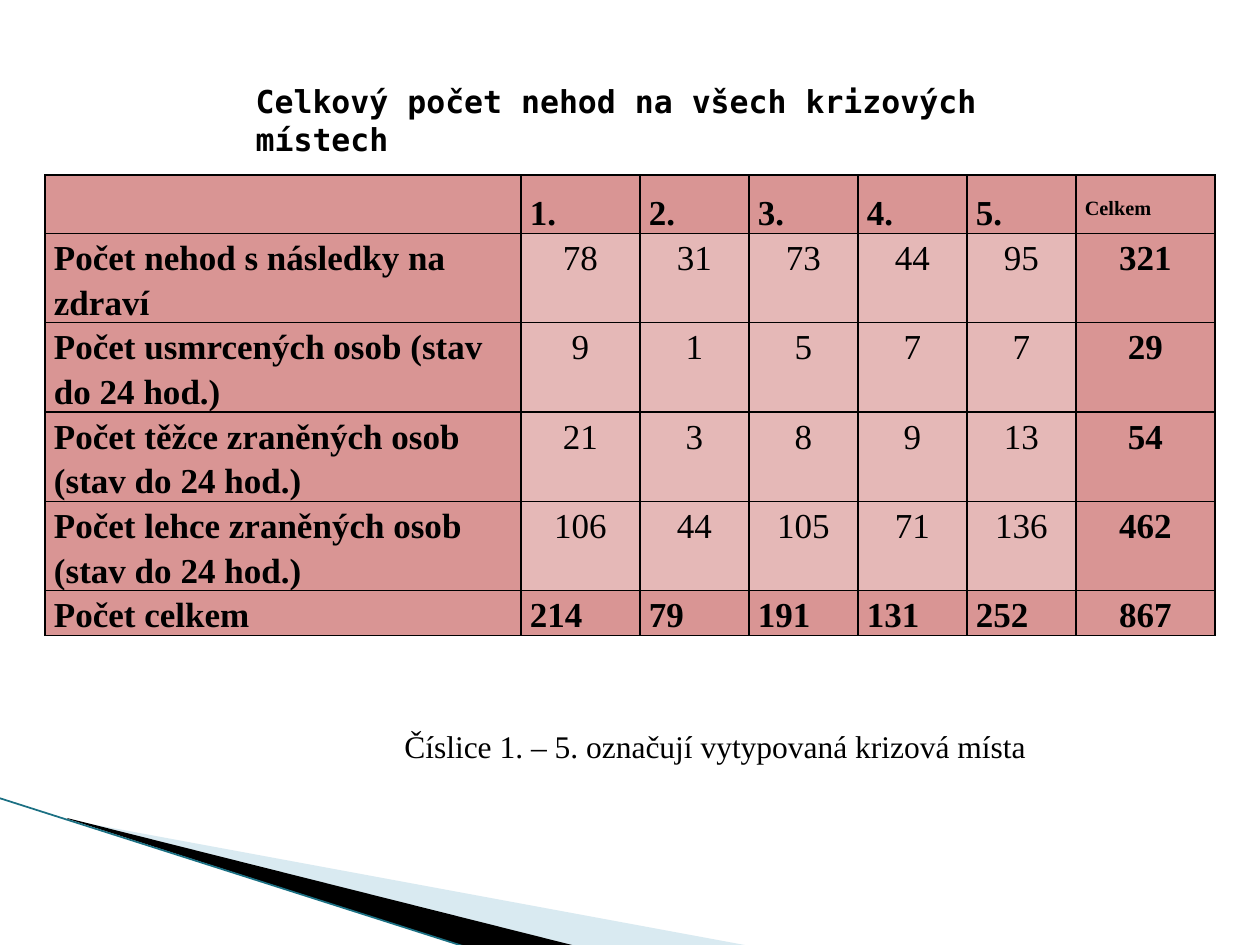
from dataclasses import dataclass

from lxml import etree
from pptx import Presentation
from pptx.dml.color import RGBColor
from pptx.enum.shapes import MSO_CONNECTOR
from pptx.enum.text import MSO_ANCHOR, MSO_AUTO_SIZE, PP_ALIGN
from pptx.oxml import parse_xml
from pptx.oxml.ns import nsdecls, qn
from pptx.util import Pt

PX = 914400 / 126
LEFT, CENTER, JUSTIFY = PP_ALIGN.LEFT, PP_ALIGN.CENTER, PP_ALIGN.JUSTIFY
TOP = MSO_ANCHOR.TOP
NO_AUTO_SIZE = MSO_AUTO_SIZE.NONE
STRAIGHT = MSO_CONNECTOR.STRAIGHT
SERIF, MONO = "Times New Roman", "DejaVu Sans Mono"
COLORS = {
    "ink": "000000",
    "heading": "D99594",
    "value": "E5B8B7",
    "pale": "A0CBDC",
    "edge": "1B7083",
}


@dataclass
class Wedge:
    points: list[tuple[int, int]]
    color: str
    opacity: int


@dataclass
class CellStyle:
    fill: str
    align: PP_ALIGN
    spacing: float
    bold: bool
    baseline: int = 0


WEDGES = [
    Wedge([(69, 820), (750, 946), (575, 946), (69, 819)], "pale", 40),
    Wedge([(67, 818), (576, 946), (469, 948), (68, 819)], "ink", 100),
]
COLUMN_WIDTHS = [476, 119, 109, 109, 109, 109, 139]
ROW_HEIGHTS = [58, 89, 89, 89, 89, 45]
ROWS = [
    ["", "1.", "2.", "3.", "4.", "5.", "Celkem"],
    ["Počet nehod s následky na zdraví", "78", "31", "73", "44", "95", "321"],
    ["Počet usmrcených osob (stav do 24 hod.)", "9", "1", "5", "7", "7", "29"],
    ["Počet těžce zraněných osob (stav do 24 hod.)", "21", "3", "8", "9", "13", "54"],
    ["Počet lehce zraněných osob (stav do 24 hod.)", "106", "44", "105", "71", "136", "462"],
    ["Počet celkem", "214", "79", "191", "131", "252", "867"],
]
HEADER = CellStyle("heading", JUSTIFY, 1.5, True)
HEADER_TOTAL = CellStyle("heading", JUSTIFY, 1.5, True, 30000)
LABEL = CellStyle("heading", LEFT, 1.15, True)
VALUE = CellStyle("value", CENTER, 1.15, False)
ROW_TOTAL = CellStyle("heading", CENTER, 1.15, True)


def emu(px: int) -> int:
    return round(px * PX)


def rgb(name: str) -> RGBColor:
    return RGBColor.from_string(COLORS[name])


def add_span(para, text: str, size: int, font: str, bold: bool = False):
    span = para.add_run()
    span.text = text
    span.font.size = Pt(size)
    span.font.name = font
    span.font.bold = bold
    span.font.color.rgb = rgb("ink")
    return span


def draw_wedge(page, wedge: Wedge) -> None:
    builder = page.shapes.build_freeform(*wedge.points[0], scale=PX)
    builder.add_line_segments(wedge.points[1:], close=True)
    shape = builder.convert_to_shape()
    shape.shadow.inherit = False
    shape.line.fill.background()
    shape.fill.solid()
    shape.fill.fore_color.rgb = rgb(wedge.color)
    if wedge.opacity < 100:
        color = shape.fill._xPr.find(f"{qn('a:solidFill')}/{qn('a:srgbClr')}")
        etree.SubElement(color, qn("a:alpha"), val=str(wedge.opacity * 1000))


def draw_edge(page) -> None:
    edge = page.shapes.add_connector(STRAIGHT, emu(-1), emu(798), emu(469), emu(948))
    edge.line.color.rgb = rgb("edge")
    edge.line.width = Pt(1)
    etree.SubElement(edge._element.spPr, qn("a:effectLst"))


def style_for(row: int, column: int) -> CellStyle:
    last_column = len(COLUMN_WIDTHS) - 1
    if row == 0:
        return HEADER_TOTAL if column == last_column else HEADER
    if column == last_column:
        return ROW_TOTAL
    if column == 0 or row == len(ROWS) - 1:
        return LABEL
    return VALUE


def add_borders(cell) -> None:
    properties = cell._tc.get_or_add_tcPr()
    for side in ("lnL", "lnR", "lnT", "lnB"):
        properties.append(parse_xml(
            f'<a:{side} {nsdecls("a")} w="12700"><a:solidFill>'
            f'<a:srgbClr val="{COLORS["ink"]}"/></a:solidFill></a:{side}>'
        ))


def fill_cell(cell, text: str, style: CellStyle) -> None:
    add_borders(cell)
    cell.fill.solid()
    cell.fill.fore_color.rgb = rgb(style.fill)
    cell.margin_left = cell.margin_right = emu(9)
    cell.margin_top = cell.margin_bottom = 0
    if not text:
        return
    para = cell.text_frame.paragraphs[0]
    para.alignment = style.align
    para.line_spacing = style.spacing
    span = add_span(para, text, 20, SERIF, style.bold)
    if style.baseline:
        span._r.get_or_add_rPr().set("baseline", str(style.baseline))


def draw_table(page) -> None:
    frame = page.shapes.add_table(
        len(ROWS), len(COLUMN_WIDTHS), emu(45), emu(175),
        emu(sum(COLUMN_WIDTHS)), emu(sum(ROW_HEIGHTS)),
    )
    table = frame.table
    for column, width in zip(table.columns, COLUMN_WIDTHS):
        column.width = emu(width)
    for row, height in zip(table.rows, ROW_HEIGHTS):
        row.height = emu(height)
    for row, texts in enumerate(ROWS):
        for column, text in enumerate(texts):
            fill_cell(table.cell(row, column), text, style_for(row, column))


def draw_title(page) -> None:
    title = page.shapes.title
    title.left, title.top, title.width, title.height = map(emu, (243, 76, 784, 50))
    box = title.text_frame
    box.word_wrap = True
    box.auto_size = NO_AUTO_SIZE
    box.vertical_anchor = TOP
    para = box.paragraphs[0]
    para.alignment = LEFT
    add_span(para, "Celkový počet nehod na všech krizových místech", 18, MONO, True)


def draw_note(page) -> None:
    box = page.shapes.add_textbox(*map(emu, (392, 721, 745, 50))).text_frame
    box.word_wrap = True
    add_span(box.paragraphs[0], "Číslice 1. – 5. označují vytypovaná krizová místa", 18, SERIF)


def main() -> None:
    deck = Presentation()
    deck.slide_width, deck.slide_height = emu(1260), emu(945)
    page = deck.slides.add_slide(deck.slide_layouts.get_by_name("Title Only"))
    for wedge in WEDGES:
        draw_wedge(page, wedge)
    draw_edge(page)
    draw_table(page)
    draw_title(page)
    draw_note(page)
    deck.save("out.pptx")


if __name__ == "__main__":
    main()
